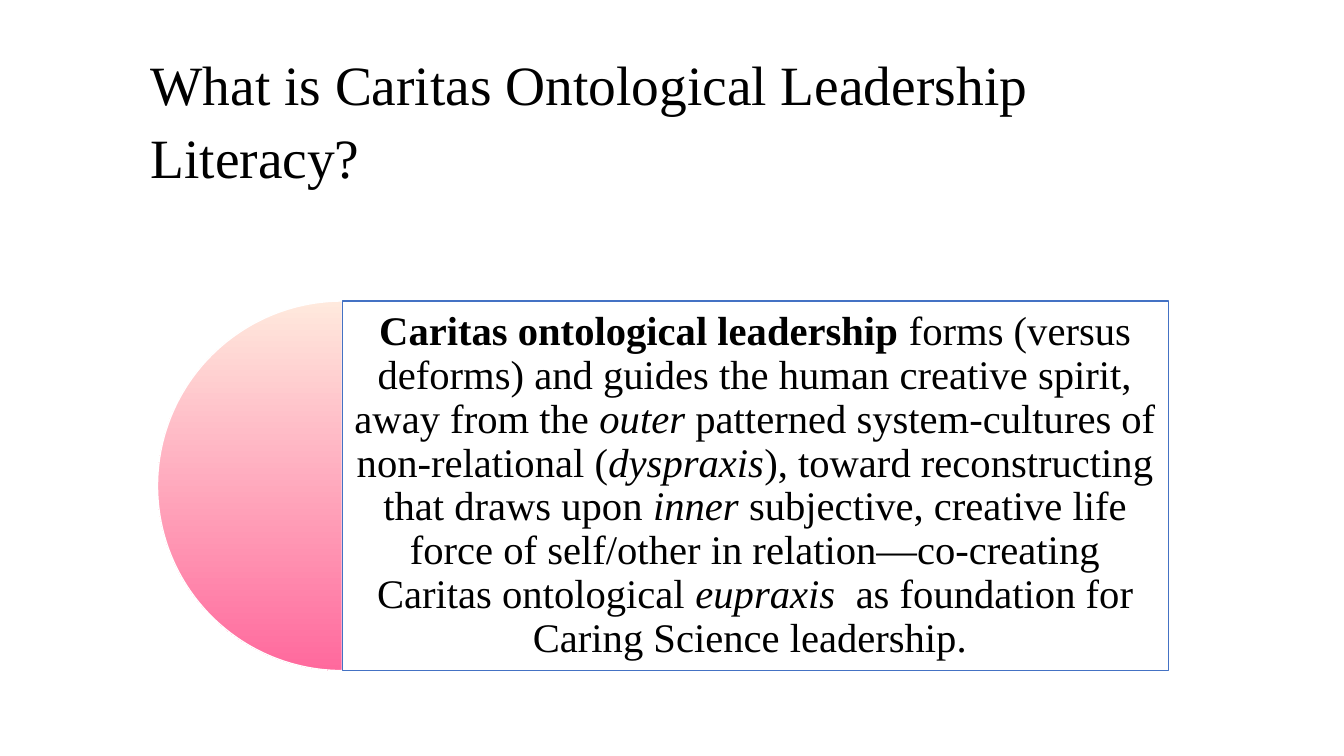
from pptx import Presentation
from pptx.dml.color import RGBColor
from pptx.enum.shapes import MSO_SHAPE
from pptx.enum.text import MSO_ANCHOR, PP_ALIGN
from pptx.util import Pt

BLACK = RGBColor(0x00, 0x00, 0x00)
WHITE = RGBColor(0xFF, 0xFF, 0xFF)
BLUE = RGBColor(0x44, 0x72, 0xC4)
PEACH = RGBColor(0xFF, 0xE9, 0xDD)
PINK = RGBColor(0xFF, 0x69, 0x9D)
FONT = "Times New Roman"
PIE, RECTANGLE = MSO_SHAPE.PIE, MSO_SHAPE.RECTANGLE
MIDDLE = MSO_ANCHOR.MIDDLE
LEFT, CENTER = PP_ALIGN.LEFT, PP_ALIGN.CENTER

TITLE = "What is Caritas Ontological Leadership Literacy?"
# Each run is its text and its style: "b" bold, "i" italic, "" plain.
DEFINITION = [
    ("Caritas ontological leadership ", "b"),
    ("forms (versus deforms) and guides the human creative spirit, away from the", ""),
    (" outer", "i"),
    (" patterned system-cultures of non-relational (", ""),
    ("dyspraxis", "i"),
    ("), toward reconstructing that draws upon ", ""),
    ("inner", "i"),
    (" subjective, creative life force of self/other in relation—co-creating "
     "Caritas ontological ", ""),
    ("eupraxis  ", "i"),
    ("as foundation for Caring Science leadership. ", ""),
]

PANEL_TOP = 215
DIAMETER = 264
PIE_LEFT = 112.5
PANEL_LEFT = PIE_LEFT + DIAMETER / 2
PANEL_WIDTH = 590


def write_text(shape, runs, size, align=LEFT, spacing=1.0, inset_x=7.2, inset_y=3.6):
    frame = shape.text_frame
    frame.word_wrap = True
    frame.vertical_anchor = MIDDLE
    frame.margin_left = frame.margin_right = Pt(inset_x)
    frame.margin_top = frame.margin_bottom = Pt(inset_y)
    paragraph = frame.paragraphs[0]
    paragraph.alignment = align
    paragraph.line_spacing = spacing
    for words, style in runs:
        run = paragraph.add_run()
        run.text = words
        run.font.name = FONT
        run.font.size = Pt(size)
        run.font.color.rgb = BLACK
        run.font.bold = style == "b"
        run.font.italic = style == "i"


def add_outlined(slide, preset, left, width, line_color):
    """Add a shape that spans the height of the definition panel."""
    shape = slide.shapes.add_shape(
        preset, Pt(left), Pt(PANEL_TOP), Pt(width), Pt(DIAMETER))
    shape.shadow.inherit = False
    shape.line.color.rgb = line_color
    shape.line.width = Pt(1)
    return shape


def add_title(slide):
    title = slide.shapes.add_textbox(Pt(100.4), Pt(58.5), Pt(780), Pt(49))
    write_text(title, [(TITLE, "")], 39.6, spacing=1.1)


def add_half_disc(slide):
    half_disc = add_outlined(slide, PIE, PIE_LEFT, DIAMETER, WHITE)
    half_disc.adjustments[0] = 54
    half_disc.adjustments[1] = 162
    half_disc.fill.gradient()
    half_disc.fill.gradient_angle = 270
    for stop, color in zip(half_disc.fill.gradient_stops, (PEACH, PINK)):
        stop.color.rgb = color


def add_definition(slide):
    panel = add_outlined(slide, RECTANGLE, PANEL_LEFT, PANEL_WIDTH, BLUE)
    panel.fill.solid()
    panel.fill.fore_color.rgb = WHITE
    write_text(panel, DEFINITION, 29, align=CENTER, spacing=0.9,
               inset_x=8, inset_y=8.7)


def main():
    presentation = Presentation()
    presentation.slide_width = Pt(960)
    presentation.slide_height = Pt(540)
    slide = presentation.slides.add_slide(presentation.slide_layouts[6])
    add_title(slide)
    add_half_disc(slide)
    add_definition(slide)
    presentation.save("out.pptx")


if __name__ == "__main__":
    main()
